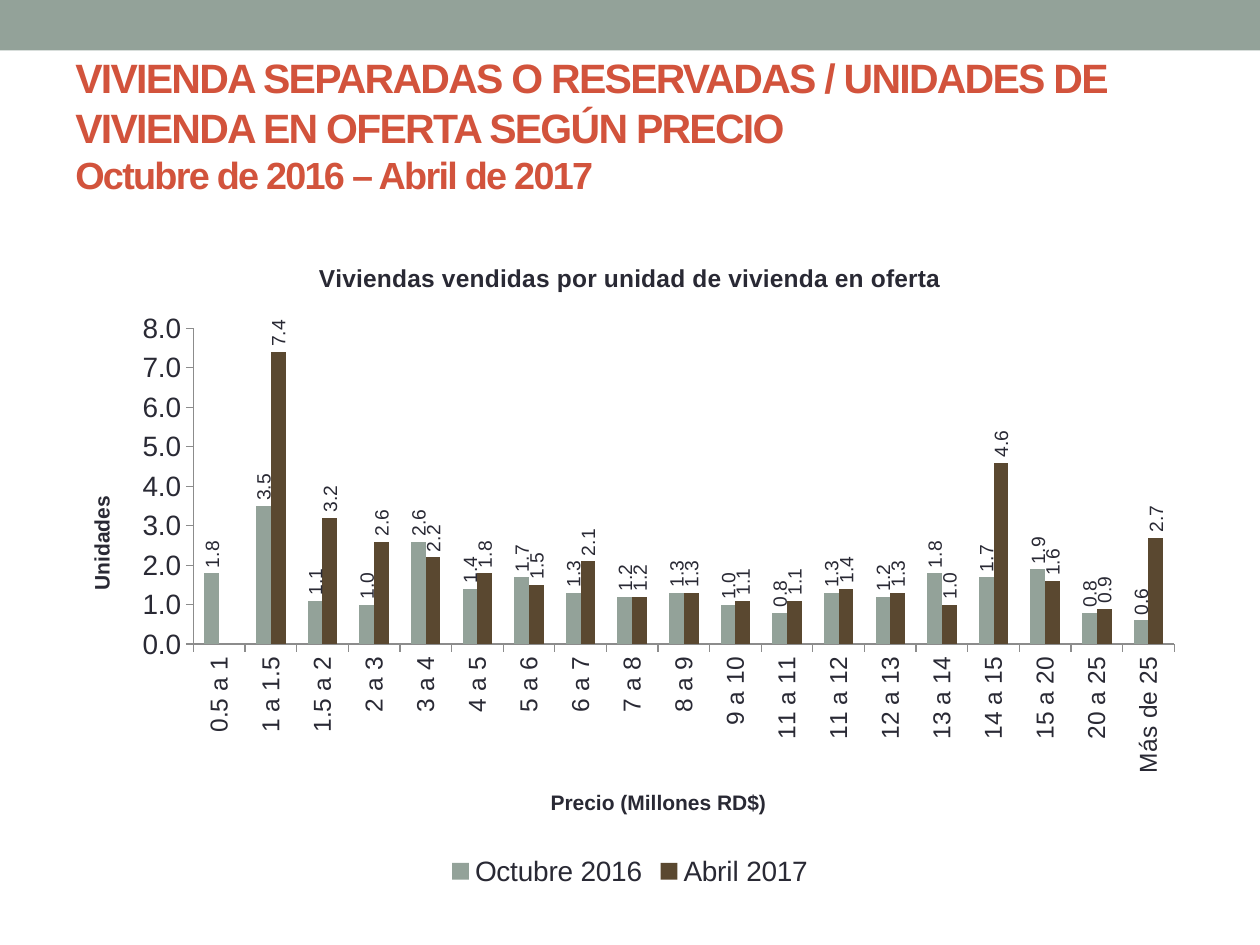
from lxml import etree
from pptx import Presentation
from pptx.chart.data import CategoryChartData
from pptx.dml.color import RGBColor
from pptx.enum.chart import XL_CHART_TYPE as ChartType
from pptx.enum.chart import XL_LABEL_POSITION as LabelPosition
from pptx.enum.chart import XL_LEGEND_POSITION as LegendPosition
from pptx.enum.chart import XL_TICK_MARK as TickMark
from pptx.enum.shapes import MSO_SHAPE as Shape
from pptx.enum.text import MSO_ANCHOR as Anchor
from pptx.oxml.ns import qn
from pptx.util import Inches, Pt

COLORS = {"sage": "93A299", "red": "D2533C", "ink": "292934",
          "brown": "5A4830", "axis": "8C8C8C"}
FONT = "Arial"
VERTICAL = "-5400000"

CATEGORIES = ["0.5 a 1", "1 a 1.5", "1.5 a 2", "2 a 3", "3 a 4", "4 a 5", "5 a 6",
              "6 a 7", "7 a 8", "8 a 9", "9 a 10", "11 a 11", "11 a 12", "12 a 13",
              "13 a 14", "14 a 15", "15 a 20", "20 a 25", "Más de 25"]
SERIES = {
    "Octubre 2016": ("sage", [1.8, 3.5, 1.1, 1, 2.6, 1.4, 1.7, 1.3, 1.2, 1.3,
                              1, 0.8, 1.3, 1.2, 1.8, 1.7, 1.9, 0.8, 0.6]),
    "Abril 2017": ("brown", [None, 7.4, 3.2, 2.6, 2.2, 1.8, 1.5, 2.1, 1.2, 1.3,
                             1.1, 1.1, 1.4, 1.3, 1, 4.6, 1.6, 0.9, 2.7]),
}


def color(name):
    return RGBColor.from_string(COLORS[name])


def turn_vertical(element):
    body = next(element.iter(qn("a:bodyPr")))
    body.set("rot", VERTICAL)
    body.set("vert", "horz")


class SlideBuilder:
    def __init__(self, slide):
        self.slide = slide

    def style_font(self, font, size, color_name="ink", bold=False):
        font.name, font.size, font.bold = FONT, Pt(size), bold
        font.color.rgb = color(color_name)

    def band(self, left, top, width, height, fill):
        shape = self.slide.shapes.add_shape(
            Shape.RECTANGLE, Inches(left), Inches(top), Inches(width), Inches(height))
        shape.shadow.inherit = False
        shape.fill.solid()
        shape.fill.fore_color.rgb = color(fill)
        shape.line.fill.background()

    def heading(self, left, top, width, height, lines):
        box = self.slide.shapes.add_textbox(
            Inches(left), Inches(top), Inches(width), Inches(height))
        frame = box.text_frame
        frame.word_wrap = True
        frame.vertical_anchor = Anchor.MIDDLE
        paragraph = frame.paragraphs[0]
        for index, (text, size) in enumerate(lines):
            if index:
                paragraph.add_line_break()
            run = paragraph.add_run()
            run.text = text
            self.style_font(run.font, size, "red", bold=True)
            run.font._element.set("spc", "-100")

    def chart_text(self, owner, text, size):
        paragraph = owner.text_frame.paragraphs[0]
        run = paragraph.add_run()
        run.text = text
        self.style_font(run.font, size, bold=True)

    def axis(self, axis, title, size):
        axis.has_major_gridlines = False
        axis.major_tick_mark = TickMark.OUTSIDE
        axis.format.line.color.rgb = color("axis")
        axis.format.line.width = Pt(0.75)
        self.style_font(axis.tick_labels.font, size)
        self.chart_text(axis.axis_title, title, 12)

    def plot_layout(self, chart, **fractions):
        area = chart._chartSpace.chart.plotArea
        for old in area.findall(qn("c:layout")):
            area.remove(old)
        layout = etree.Element(qn("c:layout"))
        area.insert(0, layout)
        manual = etree.SubElement(layout, qn("c:manualLayout"))
        settings = {"layoutTarget": "inner", "xMode": "edge", "yMode": "edge", **fractions}
        for name, value in settings.items():
            etree.SubElement(manual, qn("c:" + name)).set("val", str(value))

    def column_chart(self, left, top, width, height):
        data = CategoryChartData(number_format="0.0")
        data.categories = CATEGORIES
        for name, (_, values) in SERIES.items():
            data.add_series(name, values)
        chart = self.slide.shapes.add_chart(
            ChartType.COLUMN_CLUSTERED, Inches(left), Inches(top),
            Inches(width), Inches(height), data).chart
        self.style_font(chart.font, 16)

        # Title and legend
        chart.has_title = True
        self.chart_text(chart.chart_title,
                        "Viviendas vendidas por unidad de vivienda en oferta", 14)
        chart.chart_title.include_in_layout = True
        chart.has_legend = True
        chart.legend.position = LegendPosition.BOTTOM
        chart.legend.include_in_layout = False
        self.style_font(chart.legend.font, 16)

        # Axes
        self.axis(chart.category_axis, "Precio (Millones RD$)", 14)
        turn_vertical(chart.category_axis.tick_labels.font._element.getparent()
                      .getparent().getparent())
        value_axis = chart.value_axis
        self.axis(value_axis, "Unidades", 16)
        turn_vertical(value_axis.axis_title._element)
        value_axis.minimum_scale, value_axis.maximum_scale = 0, 8
        value_axis.major_unit = 1
        value_axis.tick_labels.number_format = "0.0"
        value_axis.tick_labels.number_format_is_linked = False

        # Columns and their labels
        plot = chart.plots[0]
        plot.gap_width, plot.overlap = 150, 0
        plot.vary_by_categories = False
        for series, (fill, _) in zip(plot.series, SERIES.values()):
            series.format.fill.solid()
            series.format.fill.fore_color.rgb = color(fill)
            labels = series.data_labels
            labels.show_value = True
            labels.number_format = "0.0"
            labels.number_format_is_linked = False
            labels.position = LabelPosition.OUTSIDE_END
            self.style_font(labels.font, 11)
            turn_vertical(labels._element)
        self.plot_layout(chart, x=0.115, y=0.138, w=0.865, h=0.483)


def main():
    presentation = Presentation()
    presentation.slide_width, presentation.slide_height = Inches(10), Inches(7.5)
    builder = SlideBuilder(presentation.slides.add_slide(presentation.slide_layouts[6]))
    builder.band(0, 0, 10, 0.4, "sage")
    builder.heading(0.5, 0.45, 9, 1.08, [
        ("VIVIENDA SEPARADAS O RESERVADAS / UNIDADES DE VIVIENDA EN OFERTA SEGÚN PRECIO", 23.4),
        ("Octubre de 2016 – Abril de 2017", 21.6)])
    builder.column_chart(0.5, 1.89, 9, 5.19)
    presentation.save("out.pptx")


if __name__ == "__main__":
    main()
